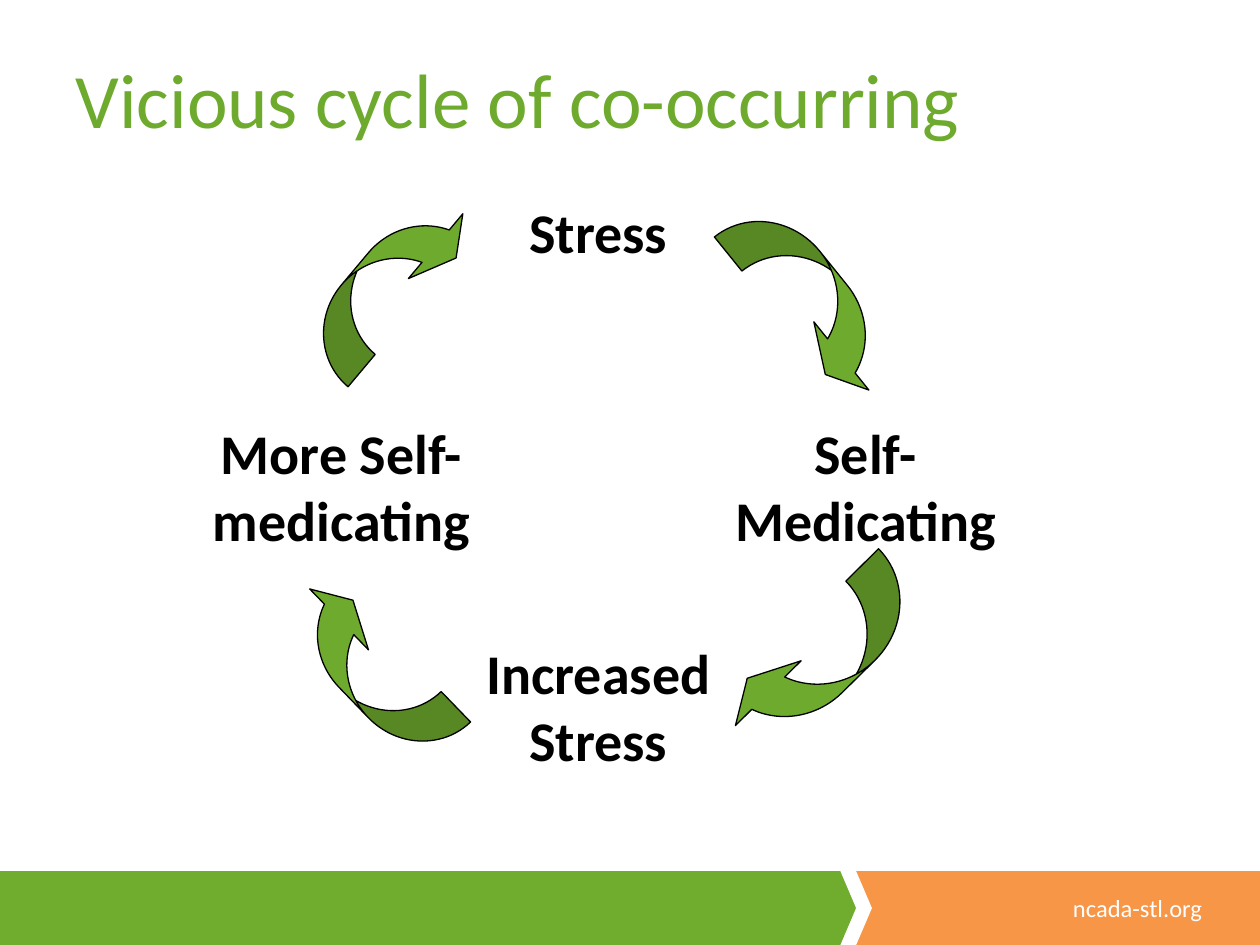
from pptx import Presentation
from pptx.dml.color import RGBColor
from pptx.enum import shapes, text
from pptx.util import Inches, Pt

COLUMNS, ROWS = 40, 30
SHAPE = shapes.MSO_SHAPE
ALIGN = text.PP_ALIGN


def colour(hex_value):
    return RGBColor.from_string(hex_value)


class CyclePage:
    """Style and current slide; lengths are columns and rows of the grid."""

    green, footer_green, orange = "6DAA2D", "70AC2E", "F79646"
    black, white = "000000", "FFFFFF"
    heading = {"size": Pt(44), "bold": False}
    label = {"size": Pt(32), "bold": True}
    footer = {"size": Pt(14), "bold": False}

    def __init__(self, deck):
        self.column = deck.slide_width / COLUMNS
        self.row = deck.slide_height / ROWS
        self.page = deck.slides.add_slide(deck.slide_layouts[5])

    def place(self, left, top, width, height):
        return (round(left * self.column), round(top * self.row),
                round(width * self.column), round(height * self.row))

    def fill_text(self, box, lines, style, hex_value, align):
        frame = box.text_frame
        frame.word_wrap = True
        frame.text = "\n".join(lines)
        for para in frame.paragraphs:
            para.alignment = align
            para.font.name = "Calibri"
            para.font.color.rgb = colour(hex_value)
            for name, value in style.items():
                setattr(para.font, name, value)

    def title(self, words, *area):
        box = self.page.shapes.title
        box.left, box.top, box.width, box.height = self.place(*area)
        self.fill_text(box, [words], self.heading, self.green, ALIGN.LEFT)
        box.text_frame.vertical_anchor = text.MSO_ANCHOR.MIDDLE

    def text(self, lines, area, style, hex_value, align=ALIGN.CENTER):
        box = self.page.shapes.add_textbox(*self.place(*area))
        self.fill_text(box, lines, style, hex_value, align)

    def shape(self, kind, area, fill):
        shape = self.page.shapes.add_shape(kind, *self.place(*area))
        shape.shadow.inherit = False
        shape.fill.solid()
        shape.fill.fore_color.rgb = colour(fill)
        shape.line.fill.background()
        return shape

    def arrow(self, area, rotation):
        arrow = self.shape(SHAPE.CURVED_DOWN_ARROW, area, self.green)
        arrow.rotation = rotation
        for index, value in enumerate((0.6, 1.2, 0.33)):
            arrow.adjustments[index] = value
        arrow.line.color.rgb = colour(self.black)
        arrow.line.width = Pt(0.75)


def main():
    deck = Presentation()
    deck.slide_width, deck.slide_height = Inches(10), Inches(7.5)
    cycle = CyclePage(deck)

    # Footer band
    top, height = 27.66, 2.34
    for kind, left, width, fill in (
        (SHAPE.RECTANGLE, 0, 27.32, cycle.footer_green),
        (SHAPE.RECTANGLE, 27.16, 12.84, cycle.orange),
        (SHAPE.CHEVRON, 26.68, 1, cycle.white),
    ):
        cycle.shape(kind, (left, top, width, height), fill)
    cycle.text(["ncada-stl.org"], (29.24, 28.16, 9.32, 1.36),
               cycle.footer, cycle.white, ALIGN.RIGHT)

    # Title
    cycle.title("Vicious cycle of co-occurring", 2, 1.2, 36, 3.8)

    # Arrows, clockwise from the upper left
    for area, rotation in (
        ((9, 7.88, 6.68, 2.24), 310),
        ((22.28, 8.36, 7, 2.32), 51.1),
        ((22.48, 19.64, 7.32, 2.44), 135.4),
        ((8.44, 20.16, 6.72, 2.24), 226),
    ):
        cycle.arrow(area, rotation)

    # Stages, clockwise from the top
    for lines, area in (
        (["Stress"], (-1, 6.08, 40, 2.52)),
        (["Self-Medicating"], (22.32, 13.08, 10.32, 4.68)),
        (["Increased", "Stress"], (-1, 20.08, 40, 4.68)),
        (["More Self-medicating"], (5.68, 13.08, 10.32, 4.68)),
    ):
        cycle.text(lines, area, cycle.label, cycle.black)

    deck.save("out.pptx")


if __name__ == "__main__":
    main()
